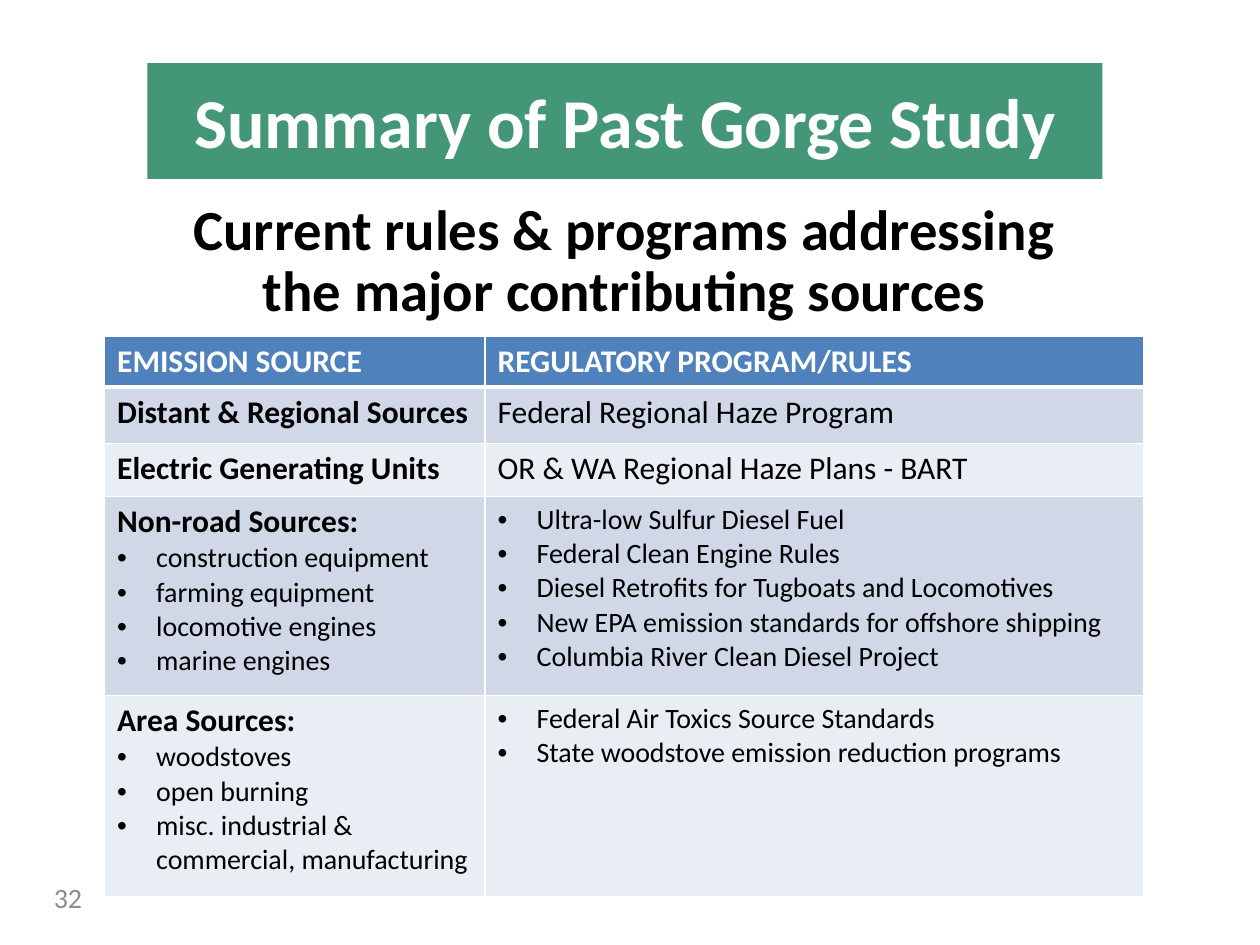
from dataclasses import dataclass

from lxml.etree import SubElement
from pptx import Presentation
from pptx.dml.color import RGBColor
from pptx.enum.shapes import MSO_SHAPE
from pptx.enum.text import MSO_ANCHOR, MSO_AUTO_SIZE, PP_ALIGN
from pptx.oxml import parse_xml
from pptx.oxml.ns import nsdecls, qn
from pptx.util import Inches, Pt


@dataclass(frozen=True)
class Theme:
    font: str = "Calibri"
    white: str = "FFFFFF"
    black: str = "000000"
    grey: str = "8C8C8C"
    green: str = "439777"
    header: str = "4F81BD"
    bands: tuple = ("D0D8E8", "E9EDF4")
    banner_size: float = 40
    title_size: float = 32.4
    row_size: float = 18
    small_size: float = 16


THEME = Theme()
COLUMNS = (3.02, 5.23)
HEADER = ("EMISSION SOURCE", "REGULATORY PROGRAM/RULES")
ROWS = [
    (0.45, ("Distant & Regional Sources", []),
     ("Federal Regional Haze Program", [])),
    (0.42, ("Electric Generating Units", []),
     ("OR & WA Regional Haze Plans - BART", [])),
    (1.58, ("Non-road Sources:",
            ["construction equipment", "farming equipment",
             "locomotive engines", "marine engines"]),
     (None, ["Ultra-low Sulfur Diesel Fuel", "Federal Clean Engine Rules",
             "Diesel Retrofits for Tugboats and Locomotives",
             "New EPA emission standards for offshore shipping",
             "Columbia River Clean Diesel Project"])),
    (1.6, ("Area Sources:",
           ["woodstoves", "open burning",
            "misc. industrial & commercial, manufacturing"]),
     (None, ["Federal Air Toxics Source Standards",
             "State woodstove emission reduction programs"])),
]


def inches(*values):
    return [Inches(v) for v in values]


def format_runs(p, size, color, bold=False):
    for r in p.runs:
        r.font.name = THEME.font
        r.font.size = Pt(size)
        r.font.bold = bold
        r.font.color.rgb = RGBColor.from_string(color)


def add_bullet(p):
    pPr = p._p.get_or_add_pPr()
    pPr.set("marL", str(Inches(0.31)))
    pPr.set("indent", str(Inches(-0.31)))
    SubElement(pPr, qn("a:buFont")).set("typeface", "Arial")
    SubElement(pPr, qn("a:buChar")).set("char", "•")


def set_borders(cell, top, bottom):
    widths = {"lnL": 1, "lnR": 1, "lnT": top, "lnB": bottom}
    for i, (side, width) in enumerate(widths.items()):
        line = parse_xml(
            f'<a:{side} {nsdecls("a")} w="{Pt(width)}"><a:solidFill>'
            f'<a:srgbClr val="{THEME.white}"/></a:solidFill></a:{side}>')
        cell._tc.get_or_add_tcPr().insert(i, line)


def fill_cell(cell, heading, bullets, fill, color, bold, top=1, bottom=1):
    cell.fill.solid()
    cell.fill.fore_color.rgb = RGBColor.from_string(fill)
    set_borders(cell, top, bottom)
    tf = cell.text_frame
    tf.text = "\n".join(([heading] if heading else []) + bullets)
    for i, p in enumerate(tf.paragraphs):
        if heading and i == 0:
            format_runs(p, THEME.row_size, color, bold)
        else:
            add_bullet(p)
            format_runs(p, THEME.small_size, color)


def place_title(s, box):
    sp = s.shapes.title
    sp.left, sp.top, sp.width, sp.height = inches(*box)
    tf = sp.text_frame
    tf.text = "Current rules & programs addressing the major contributing sources"
    tf.word_wrap = True
    tf.auto_size = MSO_AUTO_SIZE.NONE
    tf.vertical_anchor = MSO_ANCHOR.MIDDLE
    p = tf.paragraphs[0]
    p.alignment = PP_ALIGN.CENTER
    p.line_spacing = 0.9
    format_runs(p, THEME.title_size, THEME.black, True)


def add_page_number(s, box):
    tf = s.shapes.add_textbox(*inches(*box)).text_frame
    tf.text = "32"
    tf.word_wrap = True
    tf.vertical_anchor = MSO_ANCHOR.MIDDLE
    p = tf.paragraphs[0]
    p.alignment = PP_ALIGN.RIGHT
    format_runs(p, THEME.small_size, THEME.grey)


def add_rules_table(s, box):
    table = s.shapes.add_table(len(ROWS) + 1, len(COLUMNS), *inches(*box)).table
    for column, width in zip(table.columns, COLUMNS):
        column.width = Inches(width)
    table.rows[0].height = Inches(0.39)
    for c, heading in enumerate(HEADER):
        fill_cell(table.cell(0, c), heading, [], THEME.header, THEME.white,
                  True, bottom=3)
    for r, (height, *cells) in enumerate(ROWS, 1):
        table.rows[r].height = Inches(height)
        for c, (heading, bullets) in enumerate(cells):
            fill_cell(table.cell(r, c), heading, bullets,
                      THEME.bands[(r - 1) % 2], THEME.black, c == 0,
                      top=3 if r == 1 else 1)


def add_banner(s, box):
    sp = s.shapes.add_shape(MSO_SHAPE.RECTANGLE, *inches(*box))
    sp.shadow.inherit = False
    sp.fill.solid()
    sp.fill.fore_color.rgb = RGBColor.from_string(THEME.green)
    sp.line.fill.background()
    tf = sp.text_frame
    tf.text = "Summary of Past Gorge Study"
    tf.word_wrap = True
    tf.vertical_anchor = MSO_ANCHOR.MIDDLE
    p = tf.paragraphs[0]
    p.alignment = PP_ALIGN.CENTER
    format_runs(p, THEME.banner_size, THEME.white, True)


def main():
    prs = Presentation()
    prs.slide_width, prs.slide_height = inches(10, 7.5)
    s = prs.slides.add_slide(prs.slide_layouts[5])
    place_title(s, (1.33, 1.67, 7.25, 0.83))
    add_page_number(s, (0.08, 6.92, 0.67, 0.4))
    add_rules_table(s, (0.83, 2.67, 8.25, 4.45))
    add_banner(s, (1.17, 0.5, 7.58, 0.92))
    prs.save("out.pptx")


if __name__ == "__main__":
    main()
